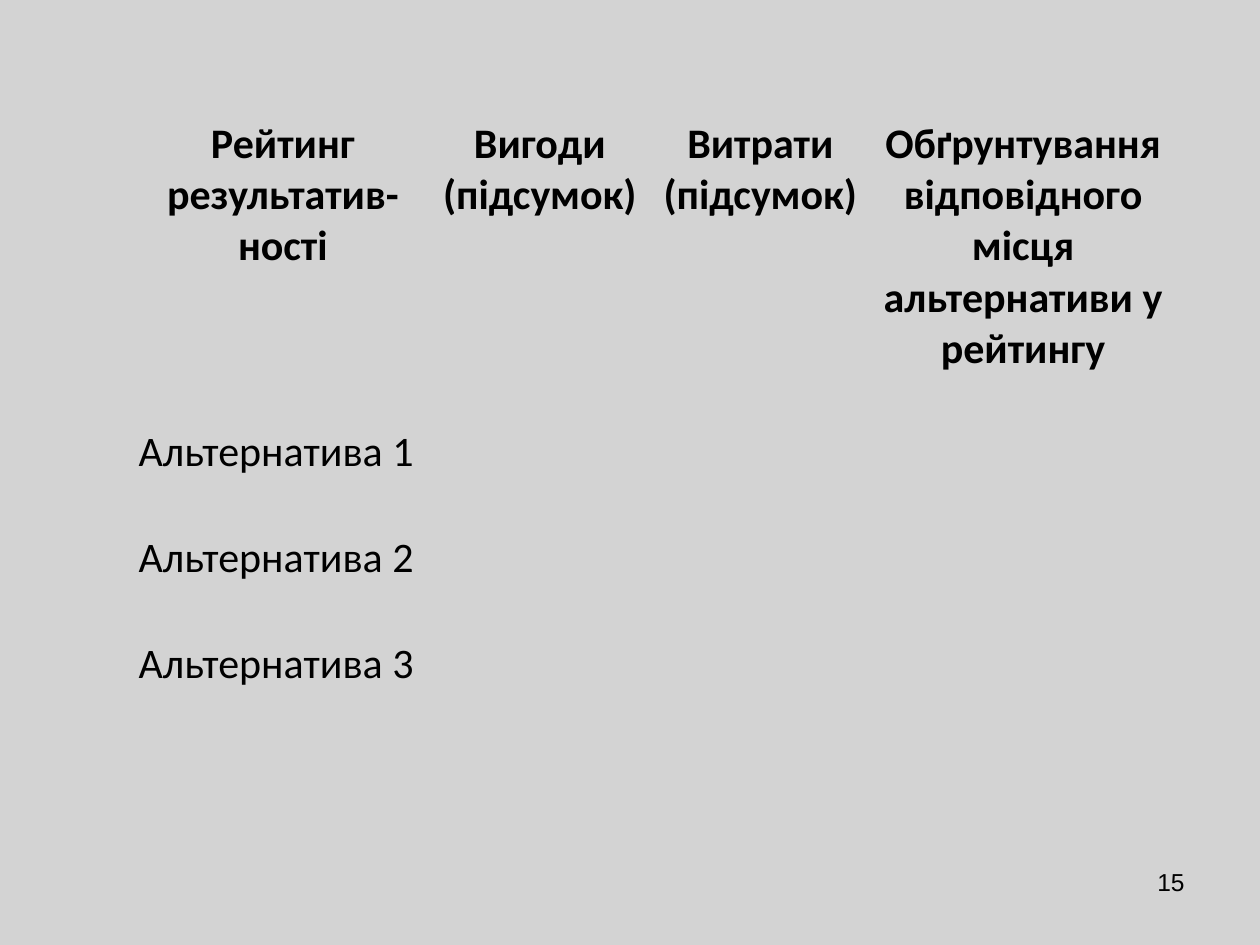
from pptx import Presentation
from pptx.dml.color import RGBColor
from pptx.enum.text import MSO_ANCHOR, PP_ALIGN as Align
from pptx.util import Inches, Pt

# Content
HEADERS = [
    "Рейтинг результатив-ності",
    "Вигоди (підсумок)",
    "Витрати (підсумок)",
    "Обґрунтування відповідного місця альтернативи у рейтингу",
]
ALTERNATIVES = ["Альтернатива 1", "Альтернатива 2", "Альтернатива 3"]
PAGE_NUMBER = "15"

# Format
COLORS = {"background": "D3D3D3", "text": "000000"}
HEADER_FONT = {"name": "Calibri", "size": Pt(24), "bold": True}
BODY_FONT = {**HEADER_FONT, "bold": False}
NUMBER_FONT = {"name": "Arial", "size": Pt(14)}
COLUMN_WIDTHS = [2.33, 1.75, 1.75, 2.42]
HEADER_HEIGHT, ROW_HEIGHT = 2.45, 0.84
CELL_MARGIN = 0.02
PLAIN_TABLE_STYLE = "{2D5ABB26-0587-4C30-8999-92F81FD0307C}"


def write(frame, text, font_values, align):
    para = frame.paragraphs[0]
    para.alignment = align
    span = para.add_run()
    span.text = text
    for name, value in font_values.items():
        setattr(span.font, name, value)
    span.font.color.rgb = RGBColor.from_string(COLORS["text"])


def add_rating_table(page):
    heights = [HEADER_HEIGHT] + [ROW_HEIGHT] * len(ALTERNATIVES)
    frame = page.shapes.add_table(
        len(heights), len(COLUMN_WIDTHS), Inches(1.08), Inches(0.92),
        Inches(sum(COLUMN_WIDTHS)), Inches(sum(heights)))
    table = frame.table

    # Plain style without bands or borders
    table.first_row = table.horz_banding = False
    style = table._tbl.tblPr.find("{*}tableStyleId")
    style.text = PLAIN_TABLE_STYLE

    for column, width in zip(table.columns, COLUMN_WIDTHS):
        column.width = Inches(width)
    for row, height in zip(table.rows, heights):
        row.height = Inches(height)
    for cell in table.iter_cells():
        cell.fill.background()
        cell.vertical_anchor = MSO_ANCHOR.TOP
        for side in ("left", "right", "top", "bottom"):
            setattr(cell, f"margin_{side}", Inches(CELL_MARGIN))

    for index, text in enumerate(HEADERS):
        write(table.cell(0, index).text_frame, text, HEADER_FONT, Align.CENTER)
    for index, text in enumerate(ALTERNATIVES, start=1):
        write(table.cell(index, 0).text_frame, text, BODY_FONT, Align.LEFT)


def main():
    deck = Presentation()
    deck.slide_width, deck.slide_height = Inches(10), Inches(7.5)
    page = deck.slides.add_slide(deck.slide_layouts[6])
    page.background.fill.solid()
    page.background.fill.fore_color.rgb = RGBColor.from_string(COLORS["background"])

    # Page number
    box = page.shapes.add_textbox(Inches(7.17), Inches(6.83), Inches(2.33), Inches(0.52))
    box.text_frame.word_wrap = True
    write(box.text_frame, PAGE_NUMBER, NUMBER_FONT, Align.RIGHT)

    add_rating_table(page)
    deck.save("out.pptx")


if __name__ == "__main__":
    main()
